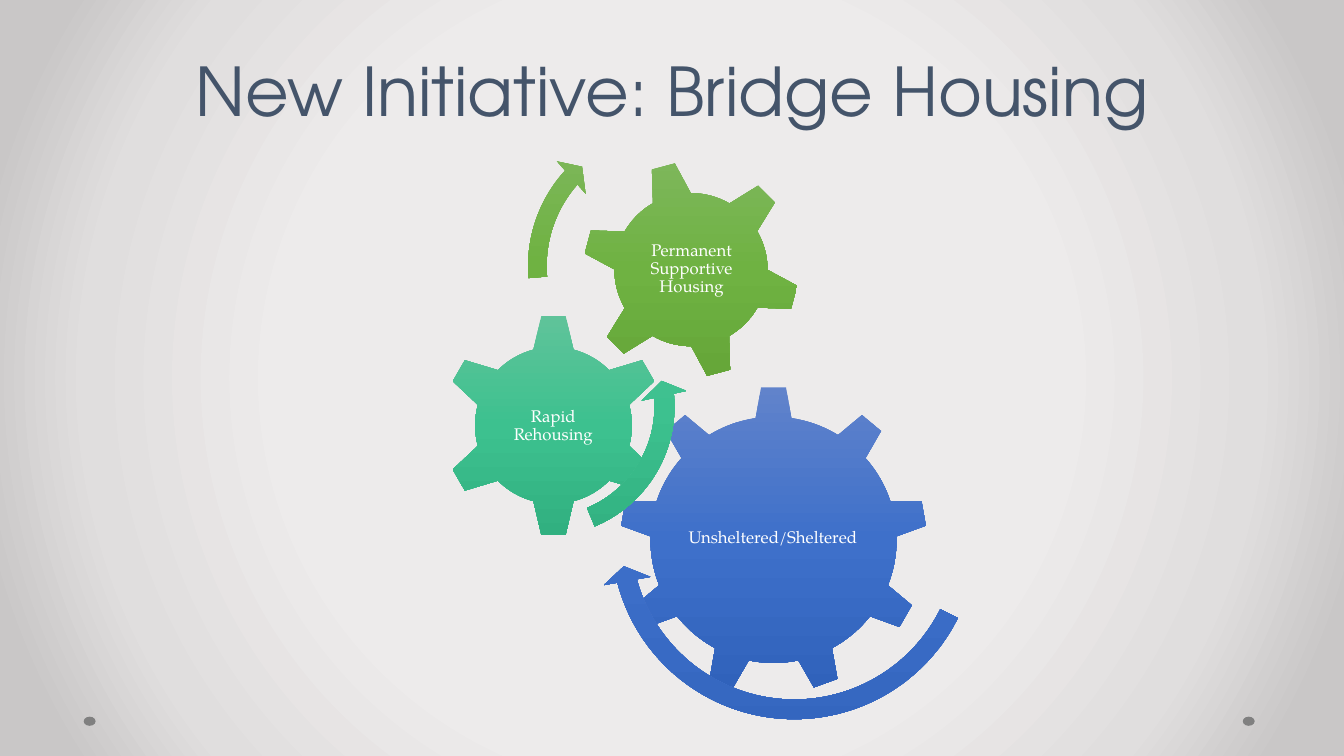
from lxml.etree import fromstring
from pptx import Presentation
from pptx.dml.color import RGBColor
from pptx.enum.shapes import MSO_SHAPE
from pptx.enum.text import MSO_ANCHOR, PP_ALIGN
from pptx.oxml.ns import nsdecls, qn
from pptx.util import Cm, Pt

SLATE = RGBColor(0x44, 0x54, 0x6A)
WHITE = RGBColor(0xFF, 0xFF, 0xFF)
GREY = RGBColor(0x80, 0x80, 0x80)
BLUE = [
    (0, RGBColor(0x61, 0x83, 0xCB)),
    (50, RGBColor(0x3E, 0x70, 0xCA)),
    (100, RGBColor(0x30, 0x62, 0xBB)),
]
TEAL = [
    (0, RGBColor(0x60, 0xC3, 0x9A)),
    (50, RGBColor(0x3D, 0xC1, 0x8F)),
    (100, RGBColor(0x31, 0xB0, 0x80)),
]
GREEN = [
    (0, RGBColor(0x81, 0xB8, 0x61)),
    (50, RGBColor(0x6F, 0xB2, 0x42)),
    (100, RGBColor(0x62, 0xA3, 0x36)),
]
PAPER = [
    (50, RGBColor(0xED, 0xEB, 0xEB)),
    (76, RGBColor(0xE0, 0xDE, 0xDE)),
    (92, RGBColor(0xC9, 0xC7, 0xC7)),
]
DOWN = '<a:lin ang="5400000" scaled="0"/>'
ROUND = (
    '<a:path path="circle">'
    '<a:fillToRect l="50000" t="50000" r="50000" b="50000"/></a:path>'
)


class Board:
    head_font = "TeX Gyre Adventor"
    body_font = "TeX Gyre Pagella"

    def __init__(self, slide):
        self.slide = slide

    def blend(self, parent, stops, course):
        marks = "".join(
            f'<a:gs pos="{pos * 1000}"><a:srgbClr val="{tone}"/></a:gs>'
            for pos, tone in stops
        )
        grad = fromstring(
            f'<a:gradFill {nsdecls("a")} rotWithShape="0">'
            f"<a:gsLst>{marks}</a:gsLst>{course}</a:gradFill>"
        )
        parent.replace(parent.find(qn("a:solidFill")), grad)

    def back(self, stops):
        self.slide.background.fill.solid()
        holder = next(self.slide.element.iter(qn("p:bgPr")))
        self.blend(holder, stops, ROUND)

    def shape(self, kind, left, top, width, height, color):
        item = self.slide.shapes.add_shape(
            kind, Cm(left), Cm(top), Cm(width), Cm(height)
        )
        item.shadow.inherit = False
        item.line.fill.background()
        item.fill.solid()
        item.fill.fore_color.rgb = color
        return item

    def dot(self, left):
        self.shape(MSO_SHAPE.OVAL, left, 18.06, 0.3, 0.23, GREY)

    def wheel(self, kind, left, top, size, stops, turn=0, adjust=()):
        item = self.shape(kind, left, top, size, size, stops[0][1])
        self.blend(item.element.spPr, stops, DOWN)
        item.rotation = turn
        for index, value in enumerate(adjust):
            item.adjustments[index] = value

    def text(self, words, box, font, size, color, space, anchor, inset):
        item = self.slide.shapes.add_textbox(*map(Cm, box))
        frame = item.text_frame
        frame.text = words
        frame.word_wrap = True
        frame.vertical_anchor = anchor
        frame.margin_left = frame.margin_right = Cm(inset[0])
        frame.margin_top = frame.margin_bottom = Cm(inset[1])
        line = frame.paragraphs[0]
        line.alignment = PP_ALIGN.CENTER
        line.line_spacing = space
        for run in line.runs:
            run.font.name = font
            run.font.size = Pt(size)
            run.font.color.rgb = color

    def title(self, words):
        self.text(words, (1.7, 0, 30.48, 3.4), self.head_font, 48, SLATE,
                  Pt(48), MSO_ANCHOR.BOTTOM, (0.25, 0.13))

    def label(self, words, *box):
        self.text(words, box, self.body_font, 12, WHITE,
                  0.9, MSO_ANCHOR.MIDDLE, (0.05, 0.05))


def main():
    deck = Presentation()
    deck.slide_width, deck.slide_height = Cm(33.87), Cm(19.05)
    board = Board(deck.slides.add_slide(deck.slide_layouts[6]))

    board.back(PAPER)
    for left in (31.32, 2.11):
        board.dot(left)
    board.title("New Initiative: Bridge Housing")

    board.wheel(MSO_SHAPE.GEAR_9, 15.62, 9.73, 7.75, BLUE)
    board.label("Unsheltered/Sheltered", 17.17, 11.56, 4.62, 3.99)
    board.wheel(MSO_SHAPE.GEAR_6, 11.13, 7.9, 5.64, TEAL)
    board.label("Rapid Rehousing", 12.55, 9.35, 2.79, 2.77)
    board.wheel(MSO_SHAPE.GEAR_6, 14.66, 4.04, 5.51, GREEN, 345)
    board.label("Permanent Supportive Housing", 15.88, 5.23, 3.1, 3.1)

    board.wheel(MSO_SHAPE.CIRCULAR_ARROW, 15.06, 8.56, 9.91, BLUE, 122.8,
                (0.05, 2.99, 25.34, 158.24, 0.06))
    board.wheel(MSO_SHAPE.LEFT_CIRCULAR_ARROW, 10.13, 6.65, 7.19, TEAL, 180,
                (0.07, 4.3, 104.89, 148.38, 0.08))
    board.wheel(MSO_SHAPE.CIRCULAR_ARROW, 13, 2.82, 7.77, GREEN, 0,
                (0.06, 3.94, 133.14, 105.08, 0.07))

    deck.save("out.pptx")


if __name__ == "__main__":
    main()
